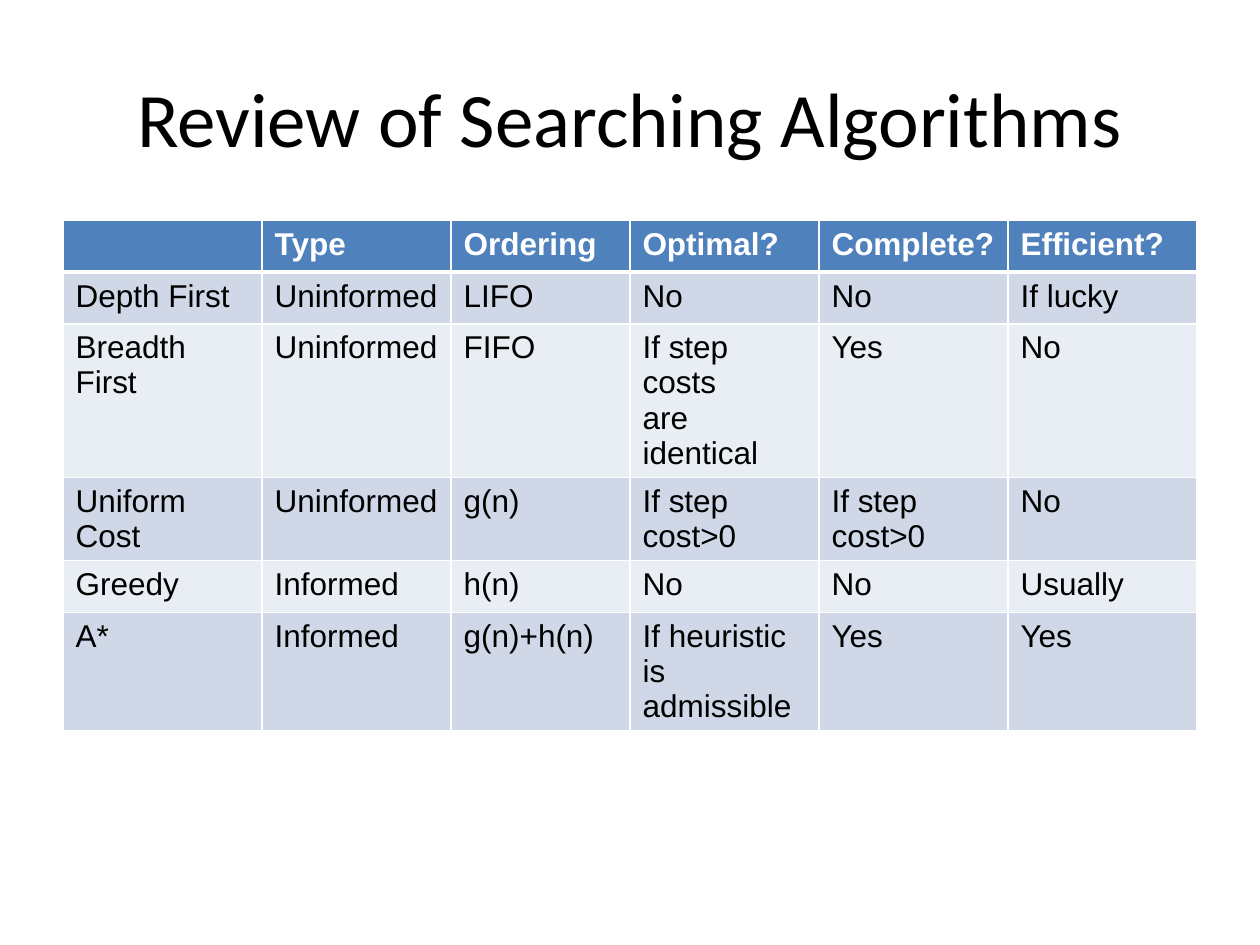
from lxml.etree import SubElement as Sub
from pptx import Presentation
from pptx.dml.color import RGBColor as RGB
from pptx.enum.text import MSO_ANCHOR as Anchor, PP_ALIGN as Align
from pptx.oxml.ns import qn
from pptx.util import Inches, Pt

WHITE = RGB(0xFF, 0xFF, 0xFF)
BLACK = RGB(0, 0, 0)
BLUE = RGB(0x4F, 0x81, 0xBD)
BANDS = RGB(0xE9, 0xED, 0xF4), RGB(0xD0, 0xD8, 0xE8)
WIDTHS = 1.58, 1.5, 1.42, 1.5, 1.5, 1.5
HIGH = 0.41
ROWS = (
    ("", "Type", "Ordering", "Optimal?", "Complete?", "Efficient?"),
    ("Depth First", "Uninformed", "LIFO", "No", "No", "If lucky"),
    ("Breadth First", "Uninformed", "FIFO", "If step costs\nare identical", "Yes", "No"),
    ("Uniform Cost", "Uninformed", "g(n)", "If step cost>0", "If step cost>0", "No"),
    ("Greedy", "Informed", "h(n)", "No", "No", "Usually"),
    ("A*", "Informed", "g(n)+h(n)", "If heuristic is admissible", "Yes", "Yes"),
)


def write(frame, text, font="Arial", size=18, color=BLACK, bold=False, align=Align.LEFT):
    """Put formatted text in a frame, one paragraph per line."""
    frame.text = text
    for para in frame.paragraphs:
        para.alignment = align
        para.font.size = Pt(size)
        for run in para.runs:
            face = run.font
            face.name, face.size, face.bold = font, Pt(size), bold
            face.color.rgb = color


def edge(cell, **sides):
    """Draw white cell borders with the given point widths."""
    props = cell._tc.get_or_add_tcPr()
    for side, width in sides.items():
        line = Sub(props, qn(f"a:ln{side}"), w=str(Pt(width)))
        fill = Sub(line, qn("a:solidFill"))
        Sub(fill, qn("a:srgbClr"), val=str(WHITE))


def paint(cell, color):
    """Fill a cell with one colour."""
    cell.fill.solid()
    cell.fill.fore_color.rgb = color


def head(slide, text):
    """Place the slide title."""
    title = slide.shapes.title
    title.left, title.top = Inches(0.5), Inches(0.3)
    title.width, title.height = Inches(9), Inches(1.25)
    title.text_frame.vertical_anchor = Anchor.MIDDLE
    write(title.text_frame, text, font="Calibri", size=44, align=Align.CENTER)


def grid(slide, rows):
    """Add the table with a header row and banded body rows."""
    table = slide.shapes.add_table(
        len(rows), len(WIDTHS), Inches(0.5), Inches(1.75),
        Inches(sum(WIDTHS)), Inches(HIGH * len(rows))).table
    for col, width in zip(table.columns, WIDTHS):
        col.width = Inches(width)
    for r, row in enumerate(rows):
        table.rows[r].height = Inches(HIGH)
        top = r == 0
        for c, text in enumerate(row):
            cell = table.cell(r, c)
            edge(cell, L=1, R=1, T=3 if r == 1 else 1, B=3 if top else 1)
            paint(cell, BLUE if top else BANDS[r % 2])
            write(cell.text_frame, text, color=WHITE if top else BLACK, bold=top)


def main():
    """Build and save the slide."""
    deck = Presentation()
    deck.slide_width, deck.slide_height = Inches(10), Inches(7.5)
    slide = deck.slides.add_slide(deck.slide_layouts.get_by_name("Title Only"))
    head(slide, "Review of Searching Algorithms")
    grid(slide, ROWS)
    deck.save("out.pptx")


if __name__ == "__main__":
    main()
